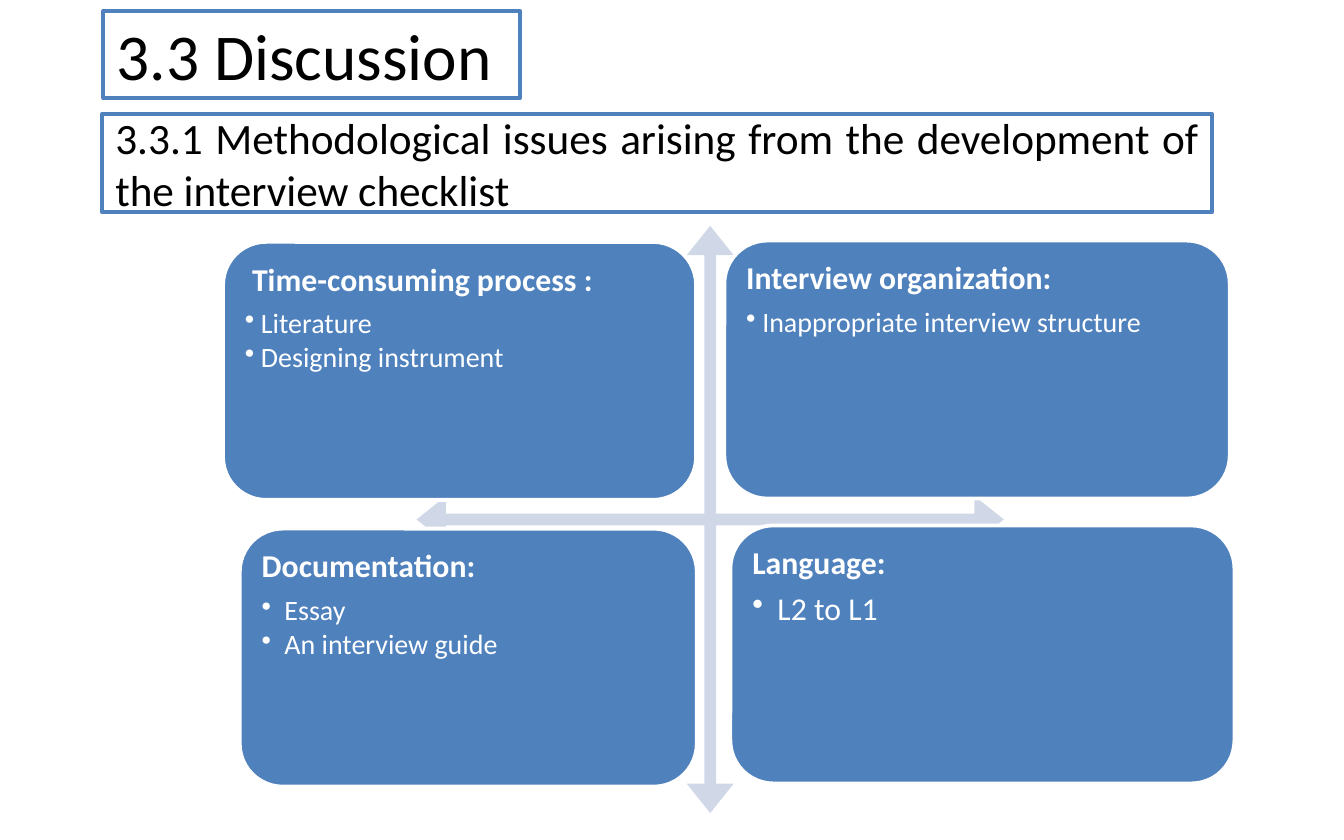
"""Build the discussion slide: two headings above four cards around a cross arrow."""
import pptx
import pptx.dml.color
import pptx.enum.shapes
import pptx.enum.text
import pptx.oxml
import pptx.oxml.ns
import pptx.util

Pt = pptx.util.Pt
SHAPES = pptx.enum.shapes.MSO_SHAPE
ALIGN = pptx.enum.text.PP_ALIGN
ANCHOR = pptx.enum.text.MSO_ANCHOR

BLUE, PALE, WHITE, BLACK = "4F81BD", "D0D8E8", "FFFFFF", "000000"
FONT = "Calibri"

HEADINGS = [
    ("3.3 Discussion", (55.4, 5.8, 223.2, 46.8), 35, ALIGN.LEFT),
    ("3.3.1 Methodological issues arising from the development of the interview checklist",
     (54.7, 61.2, 594.7, 52.6), 23.2, ALIGN.JUSTIFY),
]
ARROW = (223.2, 121, 314.6, 314.6)
ARROW_RATIOS = (0.02, 0.04, 0.05)
CARD_HEIGHT = 138.2
CARDS = [
    {"title": "Time-consuming process :", "title_indent": 3.8, "at": (119.5, 129.6, 253.4),
     "items": ["Literature", "Designing instrument"], "size": 15, "indent": 8.6},
    {"title": "Interview organization:", "title_indent": 0, "at": (388.1, 128.9, 270.7),
     "items": ["Inappropriate interview structure"], "size": 15, "indent": 8.6},
    {"title": "Language:", "title_indent": 0, "at": (391.3, 281.5, 270),
     "items": ["L2 to L1"], "size": 17, "indent": 13.5},
    {"title": "Documentation:", "title_indent": 0, "at": (128.5, 283.2, 244.8),
     "items": ["Essay", "An interview guide"], "size": 15, "indent": 12.2},
]


def color(value):
    return pptx.dml.color.RGBColor.from_string(value)


def add_box(page, preset, place, fill, line=None):
    box = page.shapes.add_shape(preset, *map(Pt, place))
    box.shadow.inherit = False
    box.fill.solid()
    box.fill.fore_color.rgb = color(fill)
    if line:
        box.line.color.rgb = color(line)
        box.line.width = Pt(2)
    else:
        box.line.fill.background()
    box.text_frame.word_wrap = True
    return box


def style(para, size, tint, bold=False, align=ALIGN.LEFT):
    para.alignment = align
    para.font.name = FONT
    para.font.size = Pt(size)
    para.font.bold = bold
    para.font.color.rgb = color(tint)


def add_heading(page, text, place, size, align):
    box = add_box(page, SHAPES.RECTANGLE, place, WHITE, BLUE)
    box.text_frame.vertical_anchor = ANCHOR.MIDDLE
    para = box.text_frame.paragraphs[0]
    para.text = text
    style(para, size, BLACK, align=align)


def add_bullet(para, indent):
    properties = para._p.get_or_add_pPr()
    properties.set("marL", str(Pt(indent)))
    properties.set("indent", str(-Pt(indent)))
    namespace = pptx.oxml.ns.nsdecls("a")
    properties.append(pptx.oxml.parse_xml(f'<a:buChar {namespace} char="•"/>'))


def add_card(page, card):
    box = add_box(page, SHAPES.ROUNDED_RECTANGLE, (*card["at"], CARD_HEIGHT), BLUE, WHITE)
    frame = box.text_frame
    frame.vertical_anchor = ANCHOR.TOP
    frame.margin_left = frame.margin_right = frame.margin_top = frame.margin_bottom = Pt(5)
    title = frame.paragraphs[0]
    title.text = card["title"]
    title._p.get_or_add_pPr().set("marL", str(Pt(card["title_indent"])))
    title.line_spacing = 0.9
    title.space_after = Pt(6)
    style(title, 17, WHITE, bold=True)
    for item in card["items"]:
        para = frame.add_paragraph()
        para.text = item
        add_bullet(para, card["indent"])
        para.line_spacing = 0.9
        para.space_after = Pt(2.2)
        style(para, card["size"], WHITE)


def main():
    deck = pptx.Presentation()
    deck.slide_width, deck.slide_height = Pt(720), Pt(450)
    page = deck.slides.add_slide(deck.slide_layouts[6])
    arrow = add_box(page, SHAPES.QUAD_ARROW, ARROW, PALE)
    for index, ratio in enumerate(ARROW_RATIOS):
        arrow.adjustments[index] = ratio
    for card in CARDS:
        add_card(page, card)
    for heading in HEADINGS:
        add_heading(page, *heading)
    deck.save("out.pptx")


if __name__ == "__main__":
    main()
